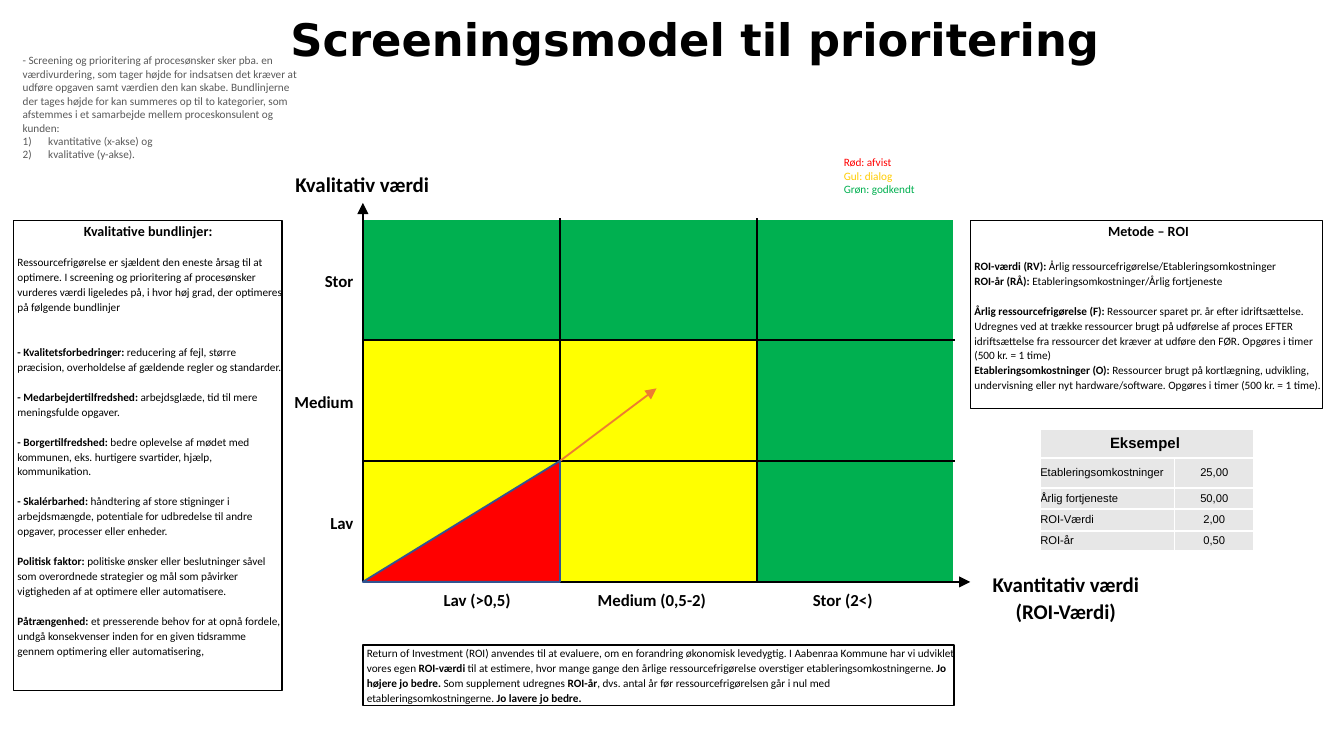
from lxml.etree import SubElement
from pptx import Presentation
from pptx.dml.color import RGBColor
from pptx.enum.shapes import MSO_CONNECTOR, MSO_SHAPE
from pptx.enum.text import MSO_ANCHOR, PP_ALIGN
from pptx.oxml.ns import qn
from pptx.util import Inches, Pt

BLACK = RGBColor(0x00, 0x00, 0x00)
WHITE = RGBColor(0xFF, 0xFF, 0xFF)
GRAY = RGBColor(0x59, 0x59, 0x59)
PALE = RGBColor(0xE7, 0xE7, 0xE7)
RED = RGBColor(0xFF, 0x00, 0x00)
YELLOW = RGBColor(0xFF, 0xFF, 0x00)
GOLD = RGBColor(0xFF, 0xCC, 0x00)
GREEN = RGBColor(0x00, 0xB0, 0x50)
BLUE = RGBColor(0x32, 0x54, 0x91)
ORANGE = RGBColor(0xED, 0x7D, 0x31)
LEFT, MID, RIGHT = PP_ALIGN.LEFT, PP_ALIGN.CENTER, PP_ALIGN.RIGHT
GAP = 8.1  # height of one 6 pt line

# Paragraphs are (space before, text); text between asterisks is bold
LINES = [
    (GAP, "Ressourcefrigørelse er sjældent den eneste årsag til at optimere. I screening og prioritering af procesønsker vurderes værdi ligeledes på, i hvor høj grad, der optimeres på følgende bundlinjer"),
    (2 * GAP, "*- Kvalitetsforbedringer: *reducering af fejl, større præcision, overholdelse af gældende regler og standarder."),
    (GAP, "*- Medarbejdertilfredshed: *arbejdsglæde, tid til mere meningsfulde opgaver."),
    (GAP, "*- Borgertilfredshed: *bedre oplevelse af mødet med kommunen, eks. hurtigere svartider, hjælp, kommunikation."),
    (GAP, "*- Skalérbarhed: *håndtering af store stigninger i arbejdsmængde, potentiale for udbredelse til andre opgaver, processer eller enheder."),
    (GAP, "*Politisk faktor: *politiske ønsker eller beslutninger såvel som overordnede strategier og mål som påvirker vigtigheden af at optimere eller automatisere."),
    (GAP, "*Påtrængenhed: *et presserende behov for at opnå fordele, undgå konsekvenser inden for en given tidsramme gennem optimering eller automatisering,"),
]
METHOD = [
    (10.1, "*ROI-værdi (RV): *Årlig ressourcefrigørelse/Etableringsomkostninger"),
    (0, "*ROI-år (RÅ): *Etableringsomkostninger/Årlig fortjeneste"),
    (GAP, "*Årlig ressourcefrigørelse (F): *Ressourcer sparet pr. år efter idriftsættelse. Udregnes ved at trække ressourcer brugt på udførelse af proces EFTER idriftsættelse fra ressourcer det kræver at udføre den FØR. Opgøres i timer (500 kr. = 1 time)"),
    (0, "*Etableringsomkostninger (O): *Ressourcer brugt på kortlægning, udvikling, undervisning eller nyt hardware/software. Opgøres i timer (500 kr. = 1 time)."),
]
NOTE = [(0, "Return of Investment (ROI) anvendes til at evaluere, om en forandring økonomisk levedygtig. I Aabenraa Kommune har vi udviklet vores egen *ROI-værdi* til at estimere, hvor mange gange den årlige ressourcefrigørelse overstiger etableringsomkostningerne. *Jo højere jo bedre. *Som supplement udregnes *ROI-år*, dvs. antal år før ressourcefrigørelsen går i nul med etableringsomkostningerne. *Jo lavere jo bedre.*")]
INTRO = [
    "- Screening og prioritering af procesønsker sker pba. en værdivurdering, som tager højde for indsatsen det kræver at udføre opgaven samt værdien den kan skabe. Bundlinjerne der tages højde for kan summeres op til to kategorier, som afstemmes i et samarbejde mellem proceskonsulent og kunden:",
    "kvantitative (x-akse) og",
    "kvalitative (y-akse).",
]
CASE = [("Etableringsomkostninger", "25,00"), ("Årlig fortjeneste", "50,00"),
        ("ROI-Værdi", "2,00"), ("ROI-år", "0,50")]
GRID = [(GREEN, GREEN, GREEN), (YELLOW, YELLOW, GREEN), (YELLOW, YELLOW, GREEN)]


def style(para, size, color=BLACK, bold=False, face="Calibri", align=LEFT):
    para.alignment = align
    for run in para.runs:
        font = run.font
        font.size, font.bold, font.name = Pt(size), bold, face
        font.color.rgb = color


def trim(frame, left=0.0):
    frame.margin_left = Inches(left)
    frame.margin_top = frame.margin_right = frame.margin_bottom = 0


def add_text(slide, box, rows):
    """Text box with one paragraph for each row."""
    frame = slide.shapes.add_textbox(*map(Inches, box)).text_frame
    frame.word_wrap = True
    frame.text = "\n".join(rows)
    return frame


def add_label(slide, box, rows, size, align=MID):
    frame = add_text(slide, box, rows)
    frame.word_wrap = False
    trim(frame)
    for para in frame.paragraphs:
        para.line_spacing = 1.11
        style(para, size, bold=True, align=align)


def add_panel(slide, box, head, body):
    """Outlined box with an optional heading and mixed bold text."""
    shape = slide.shapes.add_shape(MSO_SHAPE.RECTANGLE, *map(Inches, box))
    shape.shadow.inherit = False
    shape.fill.background()
    shape.line.color.rgb, shape.line.width = BLACK, Pt(0.75)
    frame = shape.text_frame
    frame.word_wrap, frame.vertical_anchor = True, MSO_ANCHOR.TOP
    trim(frame, 0.03)
    para = frame.paragraphs[0]
    if head:
        para.text = head
        para.line_spacing = 1.11
        style(para, 7.5, bold=True, align=MID)
    for i, (space, text) in enumerate(body):
        if head or i:
            para = frame.add_paragraph()
            para.space_before = Pt(space)
        para.line_spacing = 1.11
        for j, part in enumerate(text.split("*")):
            if part:
                run = para.add_run()
                run.text = part
                style(para, 6)
        # Bold parts alternate with plain ones
        first = text.startswith("*")
        for j, run in enumerate(para.runs):
            run.font.bold = (j % 2 == 0) == first


def add_arrow(slide, start, end, color):
    line = slide.shapes.add_connector(
        MSO_CONNECTOR.STRAIGHT, *map(Inches, start + end))
    line.line.color.rgb, line.line.width = color, Pt(1)
    SubElement(line.line._get_or_add_ln(), qn("a:tailEnd"), type="triangle")
    SubElement(line._element.spPr, qn("a:effectLst"))


def paint(cell, fill, edges):
    """Fill a cell and colour its left, right, top and bottom edges."""
    cell.fill.solid()
    cell.fill.fore_color.rgb = fill
    props = cell._tc.get_or_add_tcPr()
    for i, (side, color) in enumerate(zip("LRTB", edges)):
        line = SubElement(props, qn("a:ln" + side), w=str(Pt(1)))
        solid = SubElement(line, qn("a:solidFill"))
        SubElement(solid, qn("a:srgbClr"), val=str(color))
        props.insert(i, line)


def add_matrix(slide, x, y, w, h):
    """Three by three grid with axes, labels and the rejected zone."""
    cw, ch = w / 3, h / 3
    base = y + h
    table = slide.shapes.add_table(3, 3, *map(Inches, (x, y, w, h))).table
    for r, row in enumerate(GRID):
        for c, fill in enumerate(row):
            outer = (c == 0, c == 2, r == 0, r == 2)
            paint(table.cell(r, c), fill, [WHITE if o else BLACK for o in outer])
    # Axes
    add_arrow(slide, (x, base), (x + w + 0.12, base), BLACK)
    add_arrow(slide, (x, base), (x, y - 0.12), BLACK)
    add_label(slide, (x - 0.7, y - 0.37, 1.39, 0.21), ["Kvalitativ værdi"], 11.2)
    add_label(slide, (x + w + 0.17, base - 0.1, 1.32, 0.42),
              ["Kvantitativ værdi", "(ROI-Værdi)"], 11.2)
    # Steps on each axis
    for i, name in enumerate(("Stor", "Medium", "Lav")):
        add_label(slide, (x - 0.67, y + (i + 0.5) * ch - 0.08, 0.6, 0.17),
                  [name], 9, RIGHT)
    for mid, name in ((0.85, "Lav (>0,5)"), (2.15, "Medium (0,5-2)"),
                      (3.57, "Stor (2<)")):
        add_label(slide, (x + mid - 0.5, base + 0.04, 1, 0.17), [name], 9)
    # Rejected zone and direction
    add_arrow(slide, (x + cw, base - ch), (x + 1.49 * cw, base - 1.6 * ch), ORANGE)
    zone = slide.shapes.add_shape(
        MSO_SHAPE.RIGHT_TRIANGLE, *map(Inches, (x, base - ch, cw, ch)))
    zone.shadow.inherit = False
    zone.fill.solid()
    zone.fill.fore_color.rgb = RED
    zone.line.color.rgb, zone.line.width = BLUE, Pt(1)
    zone._element.spPr.xfrm.set("flipH", "1")


def add_case(slide, x, y, w, h):
    """Worked example under a merged heading."""
    table = slide.shapes.add_table(5, 2, *map(Inches, (x, y, w, h))).table
    for col, width in zip(table.columns, (1, w - 1)):
        col.width = Inches(width)
    for row, high in zip(table.rows, (0.22, 0.22, 0.16, 0.16, 0.15)):
        row.height = Inches(high)
    table.cell(0, 0).merge(table.cell(0, 1))
    for r, row in enumerate([("Eksempel ", "")] + CASE):
        for c, text in enumerate(row):
            cell = table.cell(r, c)
            cell.text = text
            trim(cell)
            cell.vertical_anchor = MSO_ANCHOR.MIDDLE
            style(cell.text_frame.paragraphs[0], 6 if r else 8, bold=r == 0,
                  face="Arial", align=LEFT if r and c == 0 else MID)
            paint(cell, PALE, [WHITE] * 4)


def add_intro(slide, box):
    frame = add_text(slide, box, INTRO)
    for i, para in enumerate(frame.paragraphs):
        if i:
            props = para._p.get_or_add_pPr()
            props.set("marL", str(Inches(0.19)))
            props.set("indent", str(-Inches(0.19)))
            SubElement(props, qn("a:buAutoNum"), type="arabicParenR")
        style(para, 6, GRAY)


def add_key(slide, box):
    frame = add_text(slide, box, ["Rød: afvist", "Gul: dialog", "Grøn: godkendt"])
    for para, color in zip(frame.paragraphs, (RED, GOLD, GREEN)):
        style(para, 6, color)


def add_title(slide, box):
    para = add_text(slide, box, ["Screeningsmodel til prioritering"]).paragraphs[0]
    para.line_spacing = 0.9
    style(para, 24, bold=True, face="DejaVu Sans", align=MID)


def main():
    deck = Presentation()
    deck.slide_width = Inches(10)
    deck.slide_height = deck.slide_width * 9 // 16
    slide = deck.slides.add_slide(deck.slide_layouts[6])
    add_title(slide, (0.67, 0.08, 9, 1.16))
    add_panel(slide, (2.7, 4.8, 4.4, 0.45), "", NOTE)
    add_panel(slide, (0.1, 1.64, 2, 3.5), "Kvalitative bundlinjer: ", LINES)
    add_matrix(slide, 2.7, 1.63, 4.4, 2.7)
    add_panel(slide, (7.22, 1.64, 2.62, 1.4), "Metode – ROI", METHOD)
    add_case(slide, 7.74, 3.19, 1.59, 0.91)
    add_intro(slide, (0.07, 0.35, 2.25, 0.91))
    add_key(slide, (6.18, 1.11, 0.83, 0.4))
    deck.save("out.pptx")


if __name__ == "__main__":
    main()
